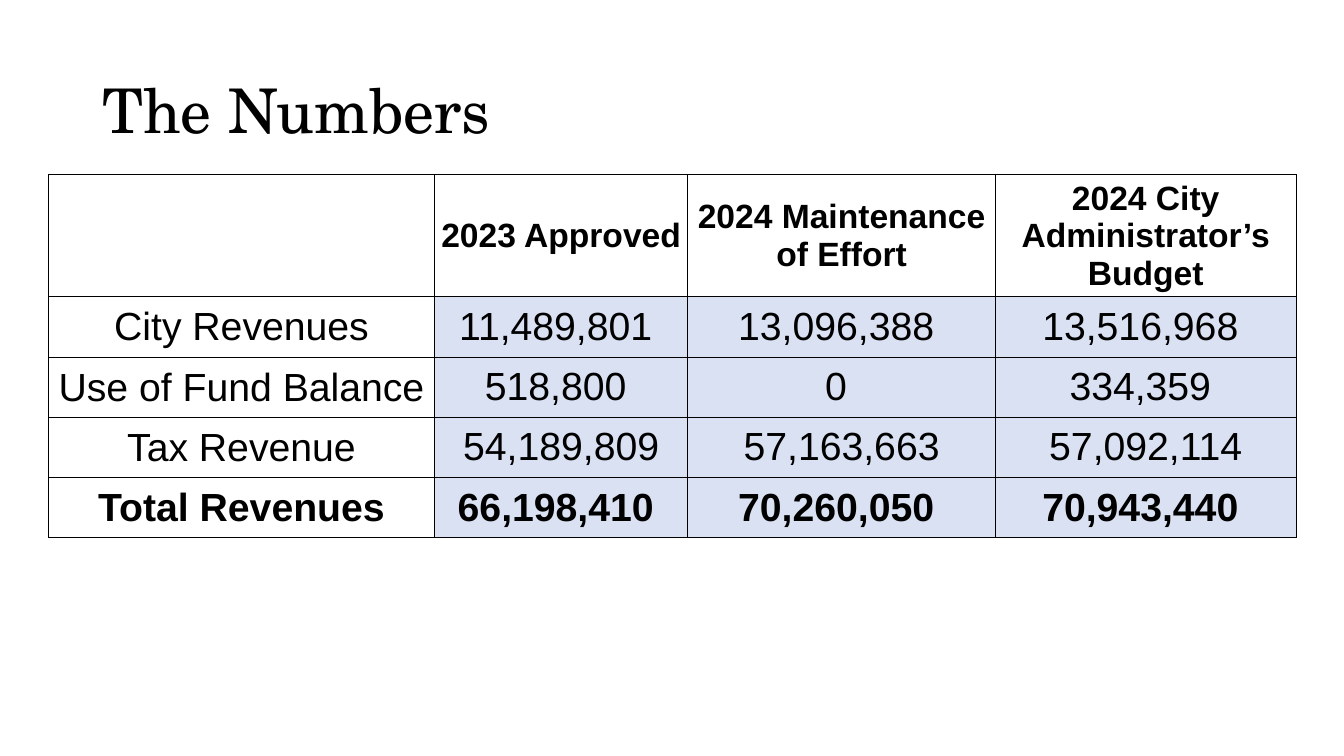
import pptx
import pptx.dml.color
import pptx.enum.text
import pptx.util
from lxml import etree
from pptx.oxml.ns import qn

Pt = pptx.util.Pt
MIDDLE = pptx.enum.text.MSO_ANCHOR.MIDDLE
CENTER = pptx.enum.text.PP_ALIGN.CENTER

# Content; amounts with a trailing space sit slightly left of centre
TITLE = "The Numbers"
ROWS = [
    ("", "2023 Approved", "2024 Maintenance of Effort", "2024 City Administrator’s Budget"),
    ("City Revenues", "11,489,801 ", "13,096,388 ", "13,516,968 "),
    ("Use of Fund Balance", "518,800 ", "0 ", "334,359 "),
    ("Tax Revenue", "54,189,809", "57,163,663", "57,092,114"),
    ("Total Revenues", "66,198,410 ", "70,260,050 ", "70,943,440 "),
]

# Style and sizes in points
BLACK = pptx.dml.color.RGBColor(0x00, 0x00, 0x00)
AMOUNT_FILL = pptx.dml.color.RGBColor(0xD9, 0xE1, 0xF2)
TITLE_FONT, TABLE_FONT = "TeX Gyre Schola", "Arial"
TABLE_LEFT, TABLE_TOP = 34.5, 124.7
COLUMN_WIDTHS = (275.9, 180.8, 219.9, 214.6)
ROW_HEIGHTS = (87, 43.1, 43.1, 43.1, 43.1)
BORDER_WIDTH = 0.5


def format_font(paragraph, name, size, bold=False):
    for run in paragraph.runs:
        run.font.name = name
        run.font.size = Pt(size)
        run.font.bold = bold
        run.font.color.rgb = BLACK


def add_borders(cell):
    properties = cell._tc.get_or_add_tcPr()
    for side in ("a:lnL", "a:lnR", "a:lnT", "a:lnB"):
        line = etree.SubElement(properties, qn(side), w=str(Pt(BORDER_WIDTH)))
        fill = etree.SubElement(line, qn("a:solidFill"))
        etree.SubElement(fill, qn("a:srgbClr"), val=str(BLACK))


presentation = pptx.Presentation()
presentation.slide_width, presentation.slide_height = Pt(960), Pt(540)
slide = presentation.slides.add_slide(presentation.slide_layouts[6])

# Title
title = slide.shapes.add_textbox(Pt(66), Pt(28.75), Pt(828), Pt(104.4))
title.text_frame.word_wrap = True
title.text_frame.vertical_anchor = MIDDLE
title.text_frame.text = TITLE
title_paragraph = title.text_frame.paragraphs[0]
title_paragraph.line_spacing = 0.9
format_font(title_paragraph, TITLE_FONT, 44)

# Table frame
table = slide.shapes.add_table(
    len(ROWS), len(COLUMN_WIDTHS), Pt(TABLE_LEFT), Pt(TABLE_TOP),
    Pt(sum(COLUMN_WIDTHS)), Pt(sum(ROW_HEIGHTS))).table
table.first_row = table.horz_banding = False
for column, width in zip(table.columns, COLUMN_WIDTHS):
    column.width = Pt(width)
for row, height in zip(table.rows, ROW_HEIGHTS):
    row.height = Pt(height)

# Table cells
for row_index, values in enumerate(ROWS):
    is_header = row_index == 0
    is_total = row_index == len(ROWS) - 1
    for column_index, value in enumerate(values):
        is_amount = column_index > 0 and not is_header
        cell = table.cell(row_index, column_index)
        cell.text_frame.text = value
        cell.vertical_anchor = MIDDLE
        cell.margin_left = cell.margin_right = cell.margin_top = Pt(0 if is_amount else 0.7)
        cell.margin_bottom = Pt(0)
        paragraph = cell.text_frame.paragraphs[0]
        paragraph.alignment = CENTER
        format_font(paragraph, TABLE_FONT, 24 if is_header else 28, is_header or is_total)
        add_borders(cell)
        if is_amount:
            cell.fill.solid()
            cell.fill.fore_color.rgb = AMOUNT_FILL
        else:
            cell.fill.background()

presentation.save("out.pptx")
